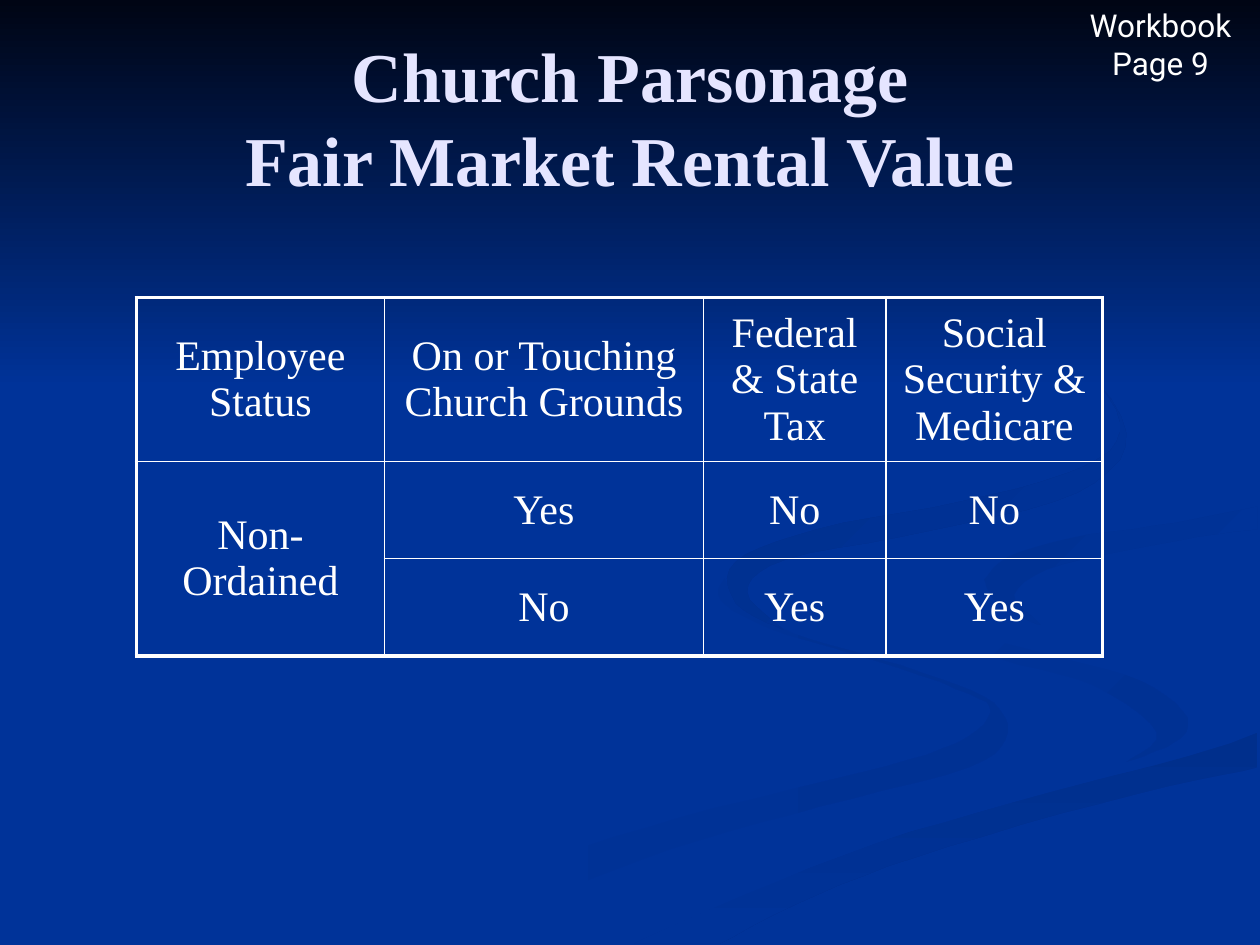
"""Build the parsonage rental value slide."""
import copy

import pptx
import pptx.dml.color
import pptx.enum.text
import pptx.oxml
import pptx.util

RGB = pptx.dml.color.RGBColor
Cm = pptx.util.Cm
Pt = pptx.util.Pt
ALIGN = pptx.enum.text.PP_ALIGN
ANCHOR = pptx.enum.text.MSO_ANCHOR

BLUE = RGB(0x00, 0x33, 0x99)
NIGHT = RGB(0x00, 0x05, 0x14)
SHADE = RGB(0x00, 0x31, 0x93)
DEEP = RGB(0x00, 0x2F, 0x8C)
LAVENDER = RGB(0xE5, 0xE5, 0xFF)
WHITE = RGB(0xFF, 0xFF, 0xFF)
SERIF = "Times New Roman"
SANS = "Roboto"
THICK, THIN = 2.25, 1
GRID_UNIT = Cm(0.0254)
PAGE_RIGHT = 1000
CURVE_STEPS = 5

RIBBONS = {
    "lower curl": dict(
        outer=[(575, 459), (594, 485), (642, 507), (715, 528), (781, 553), (800, 581),
               (769, 609), (651, 640), (532, 674), (431, 714), (361, 749)],
        inner=[(575, 459), (572, 476), (611, 499), (697, 525), (770, 551), (786, 566),
               (759, 590), (684, 613), (539, 649), (417, 690), (300, 749)],
        start=BLUE, end=SHADE, angle=0),
    "right curl": dict(
        outer=[(724, 464), (758, 498), (830, 519), (905, 540), (943, 570), (932, 589), (894, 605)],
        inner=[(724, 464), (746, 500), (797, 524), (868, 544), (918, 581), (894, 605)],
        start=BLUE, end=SHADE, angle=45),
    "lower band": dict(
        outer=[(503, 749), (569, 719), (696, 669), (831, 629), (936, 602), (998, 581)],
        inner=[(571, 749), (649, 710), (752, 672), (903, 630), (998, 609)],
        start=DEEP, end=BLUE, angle=90),
    "main band": dict(
        outer=[(999, 387), (874, 408), (755, 432), (725, 464), (759, 498), (831, 519),
               (905, 540), (943, 570), (911, 600), (743, 643), (573, 703), (477, 749)],
        inner=[(999, 402), (850, 427), (781, 463), (804, 485), (904, 519), (999, 538),
               (999, 581), (832, 629), (696, 669), (570, 719), (503, 749)],
        start=BLUE, end=BLUE, angle=0),
    "right tail": dict(
        outer=[(781, 460), (800, 442), (850, 427), (933, 415), (998, 402)],
        inner=[(781, 460), (791, 478), (826, 496), (805, 472), (843, 448), (936, 429), (998, 420)],
        start=SHADE, end=BLUE, angle=45),
    "upper curl": dict(
        outer=[(762, 233), (843, 275), (894, 344), (855, 391), (739, 421), (624, 444),
               (593, 470), (622, 500)],
        inner=[(762, 233), (846, 279), (889, 335), (861, 370), (763, 398), (649, 420),
               (584, 446), (584, 479), (622, 500)],
        start=DEEP, end=BLUE, angle=45),
    "top sky": dict(
        outer=[(0, 0), (1000, 0)], inner=[(0, 308), (1000, 308)],
        start=NIGHT, end=BLUE, angle=90),
}
ROWS = [
    ["Employee Status", "On or Touching Church Grounds",
     "Federal & State Tax", "Social Security & Medicare"],
    ["Non-Ordained", "Yes", "No", "No"],
    ["", "No", "Yes", "Yes"]]


def spline(a, b, c, d, t):
    """Return the Catmull-Rom value between b and c at t."""
    return b + t / 2 * (c - a + t * (2 * a - 5 * b + 4 * c - d + t * (3 * (b - c) + d - a)))


def smooth(knots):
    """Return points on a curve through the knots, kept on the page."""
    if len(knots) == 2:
        return knots
    padded = [knots[0], *knots, knots[-1]]
    curve = []
    for quad in zip(padded, padded[1:], padded[2:], padded[3:]):
        xs, ys = zip(*quad)
        for step in range(CURVE_STEPS):
            t = step / CURVE_STEPS
            curve.append((min(spline(*xs, t), PAGE_RIGHT), spline(*ys, t)))
    return curve + [knots[-1]]


class SlideBuilder:
    """Hold the style and the current slide."""

    def __init__(self, prs):
        self.s = prs.slides.add_slide(prs.slide_layouts[5])
        self.s.background.fill.solid()
        self.s.background.fill.fore_color.rgb = BLUE

    def run(self, p, text, size, font, color, bold=False):
        """Add one centred, styled run."""
        p.alignment = ALIGN.CENTER
        r = p.add_run()
        r.text = text
        r.font.size, r.font.name, r.font.bold = Pt(size), font, bold
        r.font.color.rgb = color
        return r

    def ribbon(self, outer, inner, start, end, angle):
        """Fill the area between two smoothed edges."""
        outline = smooth(outer) + smooth(inner)[::-1]
        fb = self.s.shapes.build_freeform(*outline[0], scale=GRID_UNIT)
        fb.add_line_segments(outline[1:], close=True)
        sp = fb.convert_to_shape()
        sp.shadow.inherit = False
        sp.line.fill.background()
        if start == end:
            sp.fill.solid()
            sp.fill.fore_color.rgb = start
            return
        sp.fill.gradient()
        sp.fill.gradient_angle = (360 - angle) % 360
        for stop, color in zip(sp.fill.gradient_stops, (start, end)):
            stop.color.rgb = color

    def title(self, lines, left, top, width, height):
        """Fill the title placeholder, kept in front of the backdrop."""
        sp = self.s.shapes.title
        self.s.shapes._spTree.append(sp._element)
        sp.left, sp.top, sp.width, sp.height = map(Cm, (left, top, width, height))
        tf = sp.text_frame
        tf.auto_size = pptx.enum.text.MSO_AUTO_SIZE.NONE
        tf.vertical_anchor = ANCHOR.MIDDLE
        p = tf.paragraphs[0]
        r = self.run(p, lines[0], 40, SERIF, LAVENDER, True)
        for line in lines[1:]:
            p.add_line_break()
            p._p[-1].append(copy.deepcopy(r._r.rPr))
            self.run(p, line, 40, SERIF, LAVENDER, True)

    def label(self, text, left, top, width, height):
        """Add a small wrapped text box."""
        sp = self.s.shapes.add_textbox(*map(Cm, (left, top, width, height)))
        sp.text_frame.word_wrap = True
        self.run(sp.text_frame.paragraphs[0], text, 18, SANS, WHITE)

    def borders(self, cell, widths):
        """Set the left, right, top and bottom borders of a cell."""
        tc_pr = cell._tc.get_or_add_tcPr()
        for i, (side, width) in enumerate(zip("LRTB", widths)):
            tc_pr.insert(i, pptx.oxml.parse_xml(
                f'<a:ln{side} xmlns:a="http://schemas.openxmlformats.org/drawingml/2006/main" '
                f'w="{Pt(width)}"><a:solidFill><a:srgbClr val="{WHITE}"/></a:solidFill></a:ln{side}>'))

    def table(self, rows, left, top, widths, heights):
        """Add a ruled table with a thick frame."""
        size = Cm(sum(widths)), Cm(sum(heights))
        t = self.s.shapes.add_table(len(rows), len(widths), Cm(left), Cm(top), *size).table
        t.first_row = t.horz_banding = False
        for col, width in zip(t.columns, widths):
            col.width = Cm(width)
        for row, height in zip(t.rows, heights):
            row.height = Cm(height)
        t.cell(1, 0).merge(t.cell(2, 0))
        for i, row in enumerate(rows):
            for j, text in enumerate(row):
                cell = t.cell(i, j)
                cell.fill.background()
                cell.vertical_anchor = ANCHOR.MIDDLE
                last_row = i + (cell.span_height if cell.is_merge_origin else 1) == len(rows)
                edges = (j == 0, j == len(row) - 1, i == 0, last_row)
                self.borders(cell, [THICK if edge else THIN for edge in edges])
                if text:
                    self.run(cell.text_frame.paragraphs[0], text, 24, SERIF, WHITE)


def main():
    """Build and save the slide."""
    prs = pptx.Presentation()
    prs.slide_width, prs.slide_height = Cm(25.4), Cm(19.05)
    b = SlideBuilder(prs)
    for ribbon in RIBBONS.values():
        b.ribbon(**ribbon)
    b.title(["Church Parsonage", "Fair Market Rental Value"], 1.27, 0.76, 22.86, 3.18)
    b.table(ROWS, 2.75, 6, [5, 6.43, 3.68, 4.37], [3.3, 1.96, 1.96])
    b.label("Workbook Page 9", 21.39, 0, 4.01, 1.78)
    prs.save("out.pptx")


if __name__ == "__main__":
    main()
